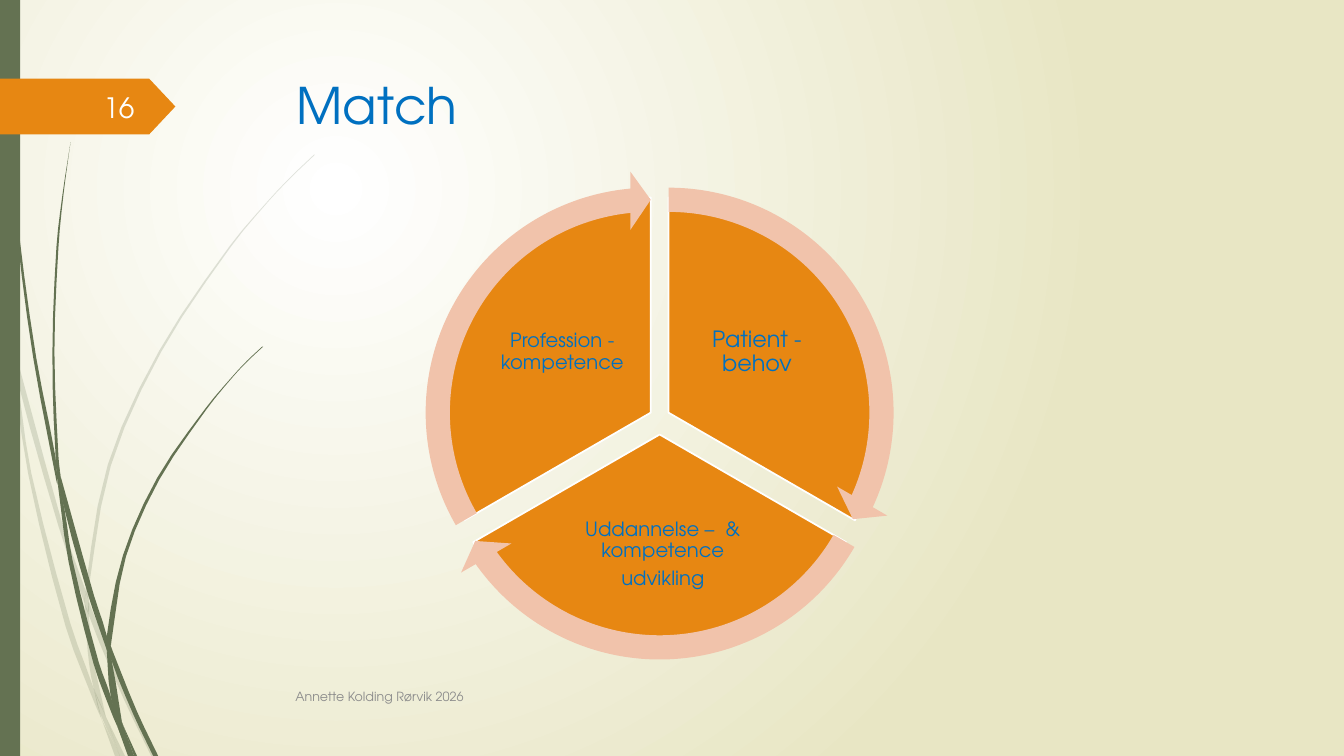
from pptx import Presentation
from pptx.dml.color import RGBColor
from pptx.enum.shapes import MSO_SHAPE
from pptx.enum.text import MSO_ANCHOR, PP_ALIGN
from pptx.oxml.ns import qn
from pptx.util import Pt
from lxml.etree import SubElement

FONT = "TeX Gyre Adventor"
COLORS = {
    "white": "FFFFFF", "sand": "E8E6C4", "moss": "647252", "orange": "E78712",
    "peach": "F1C3AB", "blue": "0070C0", "gray": "8C8C8C", "number": "FEFFFF",
}


def write_text(shape, lines, size, color, align=PP_ALIGN.LEFT, inset=None,
               line_spacing=None, space_after=None):
    frame = shape.text_frame
    frame.word_wrap = True
    frame.vertical_anchor = MSO_ANCHOR.MIDDLE
    if inset is not None:
        frame.margin_left = frame.margin_right = Pt(inset)
        frame.margin_top = frame.margin_bottom = Pt(inset)
    frame.text = "\n".join(lines)
    for para in frame.paragraphs:
        para.alignment = align
        para.line_spacing = line_spacing
        if space_after is not None:
            para.space_after = Pt(space_after)
        for span in para.runs:
            span.font.name = FONT
            span.font.size = Pt(size)
            span.font.color.rgb = RGBColor.from_string(COLORS[color])


def smooth_edge(knots, steps=3):
    last = len(knots) - 1
    slopes = []
    for index in range(last + 1):
        (x0, y0), (x1, y1) = knots[max(index - 1, 0)], knots[min(index + 1, last)]
        slopes.append((x1 - x0) / (y1 - y0))
    points = []
    for index in range(last):
        (x0, y0), (x1, y1) = knots[index], knots[index + 1]
        height = y1 - y0
        for step in range(steps):
            t = step / steps
            x = ((2 * t**3 - 3 * t**2 + 1) * x0 + (3 * t**2 - 2 * t**3) * x1
                 + height * ((t**3 - 2 * t**2 + t) * slopes[index]
                             + (t**3 - t**2) * slopes[index + 1]))
            points.append((Pt(x * 72), Pt((y0 + t * height) * 72)))
    return points + [(Pt(knots[last][0] * 72), Pt(knots[last][1] * 72))]


deck = Presentation()
deck.slide_width, deck.slide_height = Pt(960), Pt(540)
page = deck.slides.add_slide(deck.slide_layouts[5])
shapes = page.shapes

background = page.background.fill
background.gradient()
for stop, name in zip(background.gradient_stops, ("white", "sand")):
    stop.color.rgb = RGBColor.from_string(COLORS[name])
gradient = page.element.find(".//" + qn("a:gradFill"))
gradient.remove(gradient.find(qn("a:lin")))
circle = SubElement(gradient, qn("a:path"), path="circle")
SubElement(circle, qn("a:fillToRect"), l="50000", t="50000", r="100000", b="100000")

pale_blades = [
    ([(0, 2.99), (.1, 3.44), (.11, 3.5)], [(0, 2.82), (.09, 3.22), (.11, 3.5)]),
    ([(.14, 3.45), (.17, 3.76), (.58, 5.22), (.84, 5.99)],
     [(.14, 3.45), (.62, 5.2), (.85, 5.86)]),
    ([(.88, 5.96), (.88, 6.1), (1.23, 6.94), (1.5, 7.5)],
     [(.88, 5.96), (.92, 6.07), (1.27, 6.92), (1.55, 7.5)]),
    ([(1.05, 7.11), (1.19, 7.5)], [(1.05, 7.11), (1.24, 7.5)]),
    ([(.11, 3.5), (.28, 4.7), (.65, 6.21), (.92, 6.93), (1.01, 7.14)],
     [(.11, 3.5), (.17, 3.76), (.31, 4.69), (.7, 6.19), (.93, 6.83), (1.01, 7.14)]),
    ([(.84, 5.99), (.87, 6.46), (.93, 6.83), (1.05, 7.11)],
     [(.84, 5.99), (.88, 6.1), (.91, 6.46), (1.05, 7.11)]),
    ([(3.12, 1.53), (2.89, 1.75), (2.68, 1.97), (2.28, 2.44), (1.58, 3.48), (1.07, 4.61),
      (.85, 5.84), (.88, 5.96)],
     [(3.12, 1.54), (2.9, 1.75), (2.68, 1.98), (2.29, 2.45), (1.6, 3.49), (1.1, 4.62),
      (.88, 5.84), (.88, 5.96)]),
    ([(1.01, 7.14), (1.14, 7.5)], [(1.01, 7.14), (1.19, 7.5)]),
    ([(.85, 5.86), (.84, 5.99), (.88, 6.1)], [(.85, 5.86), (.88, 5.96), (.88, 6.1)]),
    ([(.93, 6.83), (.99, 7.07), (1.19, 7.5)], [(.93, 6.83), (1.05, 7.11), (1.19, 7.5)]),
]
dark_blades = [
    ([(.03, 0), (.04, .48), (.07, 1.1), (.17, 2.33), (.33, 3.55), (.56, 4.77), (.57, 4.81)],
     [(.04, 0), (.05, .48), (.08, 1.09), (.19, 2.32), (.36, 3.55), (.55, 4.53), (.57, 4.81)]),
    ([(.6, 4.72), (.64, 5.05), (.88, 5.92), (1.06, 6.45)],
     [(.6, 4.72), (.93, 5.9), (1.06, 6.31), (1.06, 6.45)]),
    ([(1.1, 6.41), (1.11, 6.56), (1.32, 7.08), (1.52, 7.5)],
     [(1.1, 6.41), (1.13, 6.49), (1.36, 7.06), (1.57, 7.5)]),
    ([(.57, 4.77), (.68, 5.57), (.93, 6.59), (1.11, 7.08), (1.17, 7.22)],
     [(.57, 4.77), (.64, 5.05), (.72, 5.56), (.98, 6.57), (1.1, 6.91), (1.17, 7.22)]),
    ([(.7, 1.41), (.62, 1.93), (.56, 2.45), (.52, 3.49), (.55, 4.49), (.6, 4.72)],
     [(.7, 1.41), (.63, 1.93), (.58, 2.45), (.54, 3.49), (.58, 4.53), (.6, 4.72)]),
    ([(1.22, 7.19), (1.33, 7.5)], [(1.22, 7.19), (1.36, 7.5)]),
    ([(.55, 4.49), (.57, 4.77), (.64, 5.05)], [(.55, 4.49), (.6, 4.72), (.64, 5.05)]),
    ([(2.6, 3.44), (2.45, 3.58), (2.31, 3.73), (2.04, 4.05), (1.56, 4.74), (1.22, 5.51),
      (1.06, 6.31), (1.1, 6.41)],
     [(2.61, 3.44), (2.45, 3.59), (2.31, 3.74), (2.05, 4.06), (1.58, 4.76), (1.25, 5.52),
      (1.11, 6.33), (1.1, 6.41)]),
    ([(1.17, 7.22), (1.27, 7.5)], [(1.17, 7.22), (1.31, 7.5)]),
    ([(1.06, 6.45), (1.1, 6.91), (1.22, 7.19)],
     [(1.06, 6.45), (1.11, 6.56), (1.21, 7.16), (1.22, 7.19)]),
    ([(1.06, 6.31), (1.06, 6.45), (1.11, 6.56)], [(1.06, 6.31), (1.1, 6.41), (1.11, 6.56)]),
    ([(1.1, 6.91), (1.17, 7.22), (1.3, 7.5)], [(1.1, 6.91), (1.22, 7.19), (1.33, 7.5)]),
]
for blades, opacity in ((pale_blades, 20), (dark_blades, 100)):
    for left_edge, right_edge in blades:
        outline = smooth_edge(left_edge) + smooth_edge(right_edge)[::-1]
        builder = shapes.build_freeform(*outline[0])
        builder.add_line_segments(outline[1:], close=True)
        blade = builder.convert_to_shape()
        blade.shadow.inherit = False
        blade.line.fill.background()
        blade.fill.solid()
        blade.fill.fore_color.rgb = RGBColor.from_string(COLORS["moss"])
        if opacity < 100:
            tint = blade.element.spPr.find(qn("a:solidFill"))[0]
            SubElement(tint, qn("a:alpha"), val=str(opacity * 1000))

CENTER_X, PIE_SIZE, ARROW_SIZE = 471.2, 307.4, 345.6
SHIFT = 6.4
sectors = [
    (SHIFT, 294.8, (162, 18), (14.73, 161.99), (486, 205.9, 109.4, 91.4),
     ["Patient - behov"], 16),
    (0, 310.4, (18, 90), (86.72, 18), (391, 356, 164.9, 80.6),
     ["Uddannelse –  & kompetence", "udvikling"], 14),
    (-SHIFT, 294.8, (90, 162), (158.73, 90), (347, 205.9, 109.4, 91.4),
     ["Profession - kompetence"], 14),
]
parts = [
    (MSO_SHAPE.RECTANGLE, (0, 0, 14.4, 540), "moss", (), None),
    (MSO_SHAPE.PENTAGON, (0, 56.2, 125.3, 39.8), "orange", (0.47,), None),
]
for shift, middle, angles, _, label_frame, lines, size in sectors:
    frame = (CENTER_X + shift - PIE_SIZE / 2, middle - PIE_SIZE / 2, PIE_SIZE, PIE_SIZE)
    parts.append((MSO_SHAPE.PIE, frame, "orange", angles, (label_frame, lines, size)))
for shift, middle, _, (end, start), *_ in sectors:
    frame = (CENTER_X + shift - ARROW_SIZE / 2, middle - ARROW_SIZE / 2, ARROW_SIZE, ARROW_SIZE)
    parts.append((MSO_SHAPE.CIRCULAR_ARROW, frame, "peach", (0.05, 3.28, end, start, 0.06), None))

for kind, frame, color, adjustments, label in parts:
    part = shapes.add_shape(kind, *map(Pt, frame))
    part.shadow.inherit = False
    part.fill.solid()
    part.fill.fore_color.rgb = RGBColor.from_string(COLORS[color])
    part.line.fill.background()
    for index, value in enumerate(adjustments):
        part.adjustments[index] = value
    if label:
        part.line.color.rgb = RGBColor.from_string(COLORS["white"])
        part.line.width = Pt(1.25)
        label_frame, lines, size = label
        box = shapes.add_textbox(*map(Pt, label_frame))
        write_text(box, lines, size, "blue", align=PP_ALIGN.CENTER, inset=1.4,
                   line_spacing=0.9, space_after=size * 0.35)

title = shapes.title
title.left, title.top, title.width, title.height = map(Pt, (204.5, 49, 702, 55.4))
write_text(title, ["Match"], 36, "blue")
title.text_frame.vertical_anchor = MSO_ANCHOR.TOP

footer = shapes.add_textbox(*map(Pt, (203.8, 483.1, 600, 28.8)))
write_text(footer, ["Annette Kolding Rørvik 2026"], 9, "gray")
number = shapes.add_textbox(*map(Pt, (41.8, 61.9, 61.2, 28.8)))
write_text(number, ["16"], 20, "number", align=PP_ALIGN.RIGHT)

deck.save("out.pptx")
